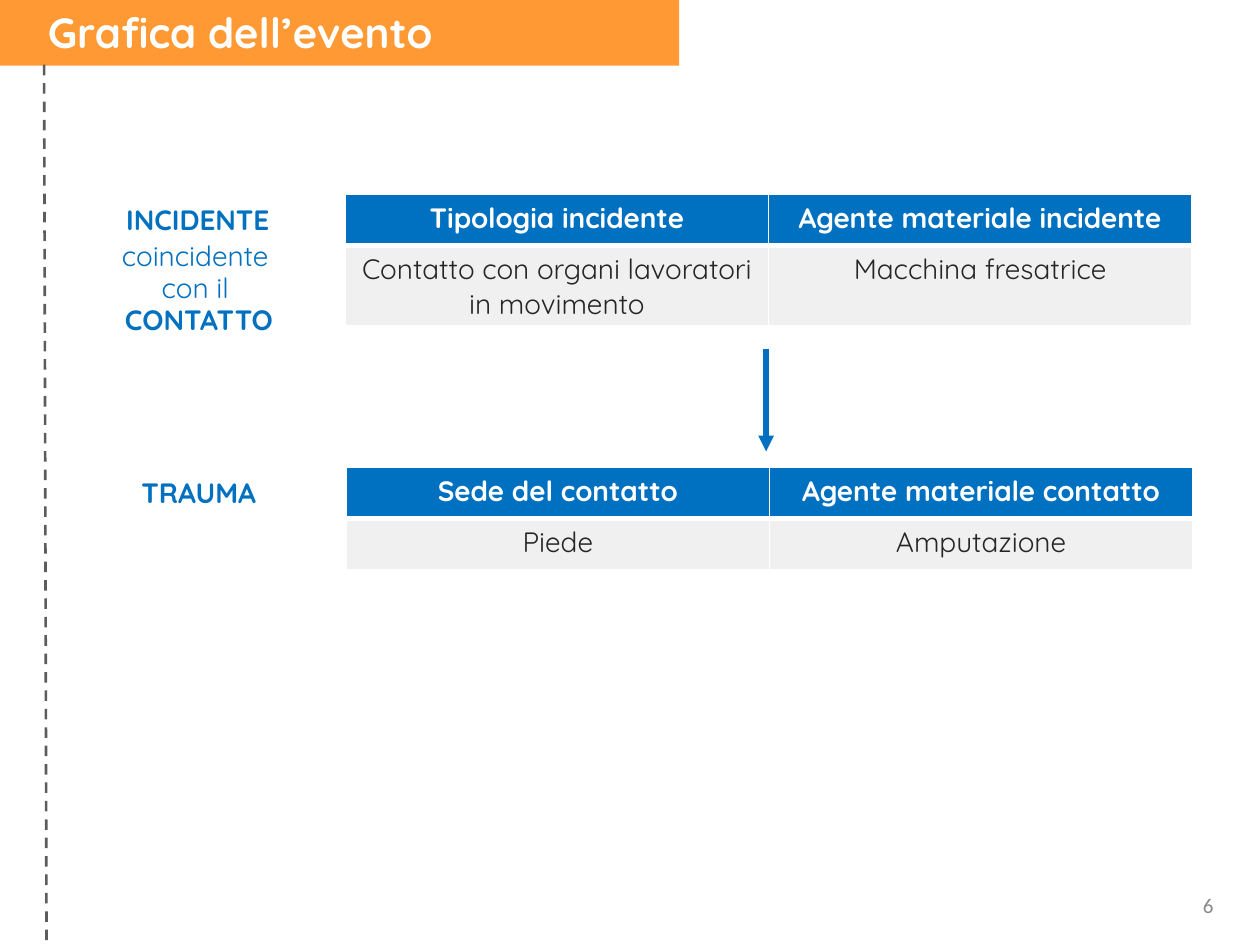
from lxml import etree
from pptx import Presentation
from pptx.dml.color import RGBColor
from pptx.enum import dml, shapes, text
from pptx.oxml import ns
from pptx.util import Pt

BLUE, WHITE, FONT = "0070C0", "FFFFFF", "Quicksand"
ALIGN = text.PP_ALIGN


def color(code):
    return RGBColor.from_string(code)


def box(*sides):
    return [Pt(side) for side in sides]


def node(parent, tag, **attrs):
    return etree.SubElement(parent, ns.qn(tag), attrs)


def write(frame, *lines, size=16, font=FONT, ink=BLUE, bold=False,
          align=ALIGN.CENTER, anchor=text.MSO_ANCHOR.TOP, space=None):
    """Fill a text frame with one paragraph per line."""
    frame.word_wrap = True
    frame.vertical_anchor = anchor
    for i, line in enumerate(lines):
        par = frame.add_paragraph() if i else frame.paragraphs[0]
        par.alignment = align
        par.line_spacing = space
        run = par.add_run()
        run.text = line
        run.font.size = Pt(size)
        run.font.name = font
        run.font.bold = bold
        run.font.color.rgb = color(ink)


def label(slide, area, *lines, **style):
    frame = slide.shapes.add_textbox(*box(*area)).text_frame
    write(frame, *lines, **style)
    return frame


def rule(slide, ends, ink, width):
    line = slide.shapes.add_connector(shapes.MSO_CONNECTOR.STRAIGHT, *box(*ends))
    line.line.color.rgb = color(ink)
    line.line.width = Pt(width)
    node(line._element.spPr, "a:effectLst")
    return line


def edge(cell, side, width):
    line = node(cell._tc.get_or_add_tcPr(), "a:ln" + side, w=str(Pt(width)))
    node(node(line, "a:solidFill"), "a:srgbClr", val=WHITE)


def header(slide, title):
    band = slide.shapes.add_shape(shapes.MSO_SHAPE.RECTANGLE,
                                  *box(-8.6, 0, 396.7, 37.6))
    band.shadow.inherit = False
    band.fill.solid()
    band.fill.fore_color.rgb = color("FF9933")
    band.line.fill.background()
    dash = rule(slide, (25.2, 37, 26.6, 540), "5C5C5C", 1.5)
    dash.line.dash_style = dml.MSO_LINE.DASH

    head = slide.shapes.title
    slide.shapes._spTree.append(head._element)  # in front of the band
    head.left, head.top, head.width, head.height = box(20.2, 0, 563.8, 36)
    write(head.text_frame, title, size=24, ink=WHITE, bold=True,
          align=ALIGN.LEFT)
    head.text_frame.auto_size = text.MSO_AUTO_SIZE.NONE


def grid(slide, area, rows, heights):
    """Two-row table: blue header over a grey body."""
    x, y, width = area
    shape = slide.shapes.add_table(len(rows), len(rows[0]),
                                   *box(x, y, width, sum(heights)))
    table = shape.table
    table.horz_banding = False
    for r, row in enumerate(rows):
        top = r == 0
        table.rows[r].height = Pt(heights[r])
        for c, words in enumerate(row):
            cell = table.cell(r, c)
            for side, line in zip("LRTB", (1, 1, 1 if top else 3, 3 if top else 1)):
                edge(cell, side, line)
            cell.fill.solid()
            cell.fill.fore_color.rgb = color(BLUE if top else "F0F0F0")
            write(cell.text_frame, words, ink=WHITE if top else "262626",
                  bold=top)


def stage(slide, x, y, name, rows, body):
    """Bold name at the left, level with the head of its table."""
    label(slide, (x, y, 129.6, 28.8), name, bold=True,
          anchor=text.MSO_ANCHOR.MIDDLE)
    grid(slide, (x + 149, y, 483.8), rows, (29.2, body))


def note(slide, area):
    frame = label(slide, area, "coincidente ", "con il ", "CONTATTO", space=0.95)
    frame.paragraphs[-1].runs[0].font.bold = True


def arrow(slide, x, top, bottom):
    line = rule(slide, (x, top, x, bottom), BLUE, 3)
    node(line.line._get_or_add_ln(), "a:tailEnd", type="triangle")


def main():
    deck = Presentation()
    deck.slide_width, deck.slide_height = box(720, 540)
    slide = deck.slides.add_slide(deck.slide_layouts[5])
    header(slide, "Grafica dell’evento")
    stage(slide, 48.3, 111, "INCIDENTE",
          [("Tipologia incidente", "Agente materiale incidente"),
           ("Contatto con organi lavoratori in movimento",
            "Macchina fresatrice")], 46)
    note(slide, (25.9, 134, 175.7, 65.5))
    arrow(slide, 437.8, 199.2, 258)
    stage(slide, 48.8, 267, "TRAUMA",
          [("Sede del contatto", "Agente materiale contatto"),
           ("Piede", "Amputazione")], 29.2)
    label(slide, (660.2, 506.2, 40.3, 30.2), "6", size=12, font="Calibri",
          ink="898989", align=ALIGN.RIGHT)
    deck.save("out.pptx")


if __name__ == "__main__":
    main()
